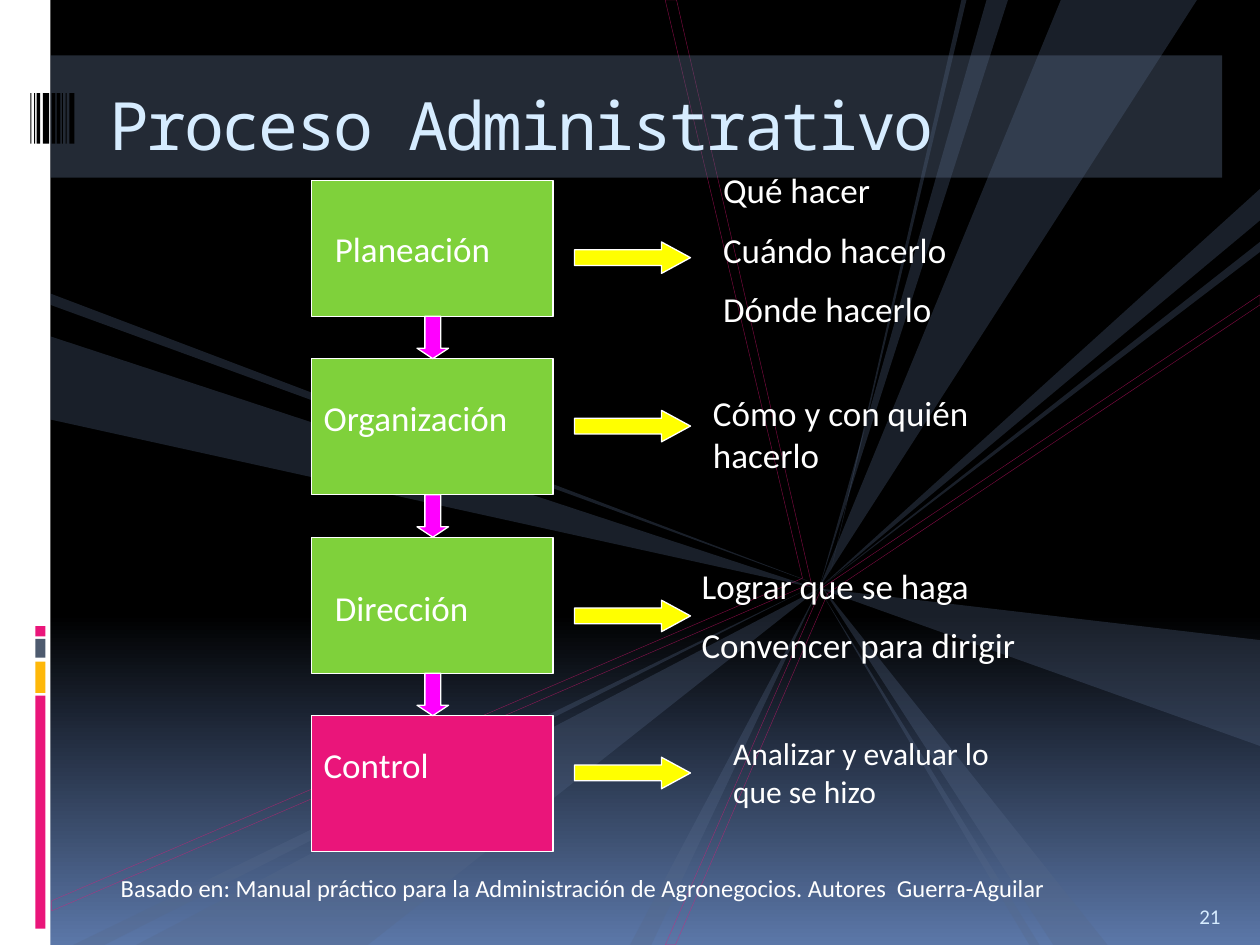
from collections import namedtuple

from lxml.etree import SubElement
from pptx import Presentation
from pptx.dml.color import RGBColor
from pptx.enum.shapes import MSO_SHAPE as Preset
from pptx.enum.text import MSO_ANCHOR as Anchor, PP_ALIGN as Align
from pptx.oxml.ns import qn
from pptx.util import Inches, Pt

WHITE = RGBColor(0xFF, 0xFF, 0xFF)
BLACK = RGBColor(0x00, 0x00, 0x00)
PINK = RGBColor(0xEA, 0x15, 0x7A)
AMBER = RGBColor(0xFE, 0xB8, 0x0A)
SLATE = RGBColor(0x4E, 0x5B, 0x6F)
RAY_BLUE = RGBColor(0x56, 0x69, 0x89)
BAND_BLUE = RGBColor(0x58, 0x6A, 0x86)
SKY_BLUE = RGBColor(0x5B, 0x77, 0xA8)
PALE_BLUE = RGBColor(0xD6, 0xEC, 0xFF)
GREEN = RGBColor(0x7F, 0xD1, 0x3B)
YELLOW = RGBColor(0xFF, 0xFF, 0x00)
MAGENTA = RGBColor(0xFF, 0x00, 0xFF)

Box = namedtuple("Box", "left top width height")
Step = namedtuple("Step", "label fill label_left label_top label_height "
                          "note note_box note_size")

PAGE = Box(0, 0, 10, 7.5)
MARGIN = Box(0, 0, 0.4, PAGE.height)
BAND = Box(MARGIN.width, 0.44, 9.3, 0.97)
FLOW = Box(2.47, 1.43, 1.92, 5.33)
STEP_HEIGHT = 1.08
HUB = (6.5, 4.67)

# Each ray: its two points on the slide's edge, then the point where it closes.
RAYS = [
    ((7.67, 0), (7.63, 0), (6.59, 4.55)),
    ((8.42, 0), (9.5, 0), HUB),
    ((10, 5.08), (10, 5.92), HUB),
    ((7.83, 0), (8, 0), HUB),
    ((8.36, 7.5), (8.79, 7.5), (6.51, 4.64)),
    ((8.17, 7.5), (8.25, 7.5), HUB),
    ((10, 1.5), (10, 1.75), HUB),
    ((10, 1.92), (10, 2), HUB),
    ((1.08, 7.5), (2.92, 7.5), HUB),
    ((0.58, 7.5), (0.83, 7.5), (6.42, 4.67)),
    ((0.4, 2.67), (0.4, 3.33), (6.48, 4.67)),
    ((0.4, 2.33), (0.4, 2.42), (6.57, 4.67)),
    ((5, 7.5), (5.17, 7.5), HUB),
]
BEAMS = [
    [(5.28, 7.5), (6.52, 4.67), (10, 2.34), (10, 2.42), (6.57, 4.71), (5.36, 7.5)],
    [(0.41, 7.15), (0.41, 7.23), (6.44, 4.63), (5.37, 0), (5.28, 0), (6.37, 4.59)],
]
MARGIN_BLOCKS = [(5.52, 1.85, PINK), (5.25, 0.25, AMBER),
                 (5.07, 0.15, SLATE), (4.97, 0.08, PINK)]
BARCODE = [(0.24, 0.01), (0.27, 0.01), (0.29, 0.03), (0.34, 0.05), (0.41, 0.03),
           (0.45, 0.03), (0.49, 0.01), (0.52, 0.01), (0.55, 0.04)]
STEPS = [
    Step("Planeación", GREEN, 0.09, 0.33, 1.45,
         ["Qué hacer", "Cuándo hacerlo", "Dónde hacerlo"],
         Box(5.64, 1.29, 2.25, 1.45), 20),
    Step("Organización", GREEN, 0, 0.25, 0.44, ["Cómo y con quién hacerlo"],
         Box(5.56, 3.06, 2.42, 0.77), 20),
    Step("Dirección", GREEN, 0.09, 0.34, 0.44,
         ["Lograr que se haga", "Convencer para dirigir"],
         Box(5.47, 4.43, 2.83, 0.94), 20),
    Step("Control", PINK, 0, 0.17, 0.44, ["Analizar y evaluar lo que se hizo"],
         Box(5.72, 5.78, 2.5, 1.15), 18),
]


def place(shape, box):
    for name, value in box._asdict().items():
        setattr(shape, name, Inches(value))


def set_opacity(fill_parent, percent):
    """Add an alpha value to the solid colour inside a shape or line element."""
    color = fill_parent.find(qn("a:solidFill")).find(qn("a:srgbClr"))
    SubElement(color, qn("a:alpha")).set("val", str(percent * 1000))


def paint(shape, fill=None, line=None, line_width=0.75):
    shape.shadow.inherit = False
    for target, color in ((shape.fill, fill), (shape.line.fill, line)):
        if color is None:
            target.background()
        else:
            target.solid()
            target.fore_color.rgb = color
    if line is not None:
        shape.line.width = Pt(line_width)


def add_preset(slide, preset, box, fill, line=None, adjustments=()):
    shape = slide.shapes.add_shape(preset, *map(Inches, box))
    paint(shape, fill, line)
    for index, value in enumerate(adjustments):
        shape.adjustments[index] = value
    return shape


def add_outline(slide, points):
    corners = [(Inches(x), Inches(y)) for x, y in points]
    builder = slide.shapes.build_freeform(*corners[0])
    builder.add_line_segments(corners[1:], close=True)
    return builder.convert_to_shape()


def format_font(font, **values):
    font.color.rgb = values.pop("color")
    for name, value in values.items():
        setattr(font, name, value)


def add_text(slide, box, lines, size, color=WHITE, anchor=Anchor.TOP):
    frame = slide.shapes.add_textbox(*map(Inches, box)).text_frame
    frame.word_wrap = True
    frame.vertical_anchor = anchor
    frame.text = "\n".join(lines)
    for index, paragraph in enumerate(frame.paragraphs):
        paragraph.space_before = Pt(size / 2 if index else 0)
        format_font(paragraph.runs[0].font, name="Calibri", size=Pt(size), color=color)


def add_background(slide):
    fill = slide.background.fill
    fill.gradient()
    fill.gradient_angle = 270
    for stop, position, color in zip(fill.gradient_stops, (0.65, 1), (BLACK, SKY_BLUE)):
        stop.position = position
        stop.color.rgb = color


def add_rays(slide):
    for points in BEAMS:
        beam = add_outline(slide, points)
        paint(beam, line=PINK, line_width=0.25)
        set_opacity(beam.line.fill._xPr, 53)
    for points in RAYS:
        ray = add_outline(slide, points)
        paint(ray, RAY_BLUE)
        set_opacity(ray.element.spPr, 30)


def add_margin(slide, box):
    add_preset(slide, Preset.RECTANGLE, box, WHITE)
    for top, height, color in MARGIN_BLOCKS:
        block = Box(box.left + box.width * 0.7, top, box.width * 0.2, height)
        add_preset(slide, Preset.RECTANGLE, block, color)


def add_title_band(slide, box):
    band = add_preset(slide, Preset.RECTANGLE, box, BAND_BLUE)
    set_opacity(band.element.spPr, 40)
    for left, width in BARCODE:
        add_preset(slide, Preset.RECTANGLE, Box(left, box.top + 0.3, width, 0.4), BLACK)

    title = slide.shapes.title
    slide.shapes.element.append(title.element)  # bring in front of the band
    place(title, Box(box.left + 0.37, box.top + 0.12, 8.92, 0.85))
    title.text_frame.text = "Proceso Administrativo"
    title.text_frame.vertical_anchor = Anchor.MIDDLE
    paragraph = title.text_frame.paragraphs[0]
    paragraph.alignment = Align.LEFT
    run = paragraph.runs[0]
    format_font(run.font, name="Noto Sans Mono", size=Pt(38), color=PALE_BLUE)
    run.font._element.set("spc", "-150")


def add_flow(slide, box):
    pitch = (box.height - STEP_HEIGHT) / (len(STEPS) - 1)
    for index, step in enumerate(STEPS):
        top = box.top + index * pitch
        label_top = top + step.label_top
        add_preset(slide, Preset.RECTANGLE,
                   Box(box.left, top, box.width, STEP_HEIGHT), step.fill, WHITE)
        add_text(slide, Box(box.left + step.label_left, label_top, 1.83,
                            step.label_height), [step.label], 20)
        add_text(slide, step.note_box, step.note, step.note_size)
        add_preset(slide, Preset.RIGHT_ARROW,
                   Box(box.left + box.width + 0.17, label_top + 0.16, 0.92, 0.25),
                   YELLOW, WHITE, (0.5, 0.92))
        if index:
            gap = pitch - STEP_HEIGHT
            add_preset(slide, Preset.DOWN_ARROW,
                       Box(box.left + box.width / 2 - 0.12, top - gap, 0.25, gap),
                       MAGENTA, WHITE, (0.5, 0.33))


def add_footer(slide):
    add_text(slide, Box(0.86, 6.88, 8.58, 0.34),
             ["Basado en: Manual práctico para la Administración de Agronegocios. "
              "Autores  Guerra-Aguilar"], 14)
    add_text(slide, Box(9.42, 7.02, 0.5, 0.4), ["21"], 12, PALE_BLUE, Anchor.BOTTOM)


def main():
    presentation = Presentation()
    presentation.slide_width = Inches(PAGE.width)
    presentation.slide_height = Inches(PAGE.height)
    slide = presentation.slides.add_slide(presentation.slide_layouts[5])
    add_background(slide)
    add_margin(slide, MARGIN)
    add_rays(slide)
    add_title_band(slide, BAND)
    add_flow(slide, FLOW)
    add_footer(slide)
    presentation.save("out.pptx")


if __name__ == "__main__":
    main()
